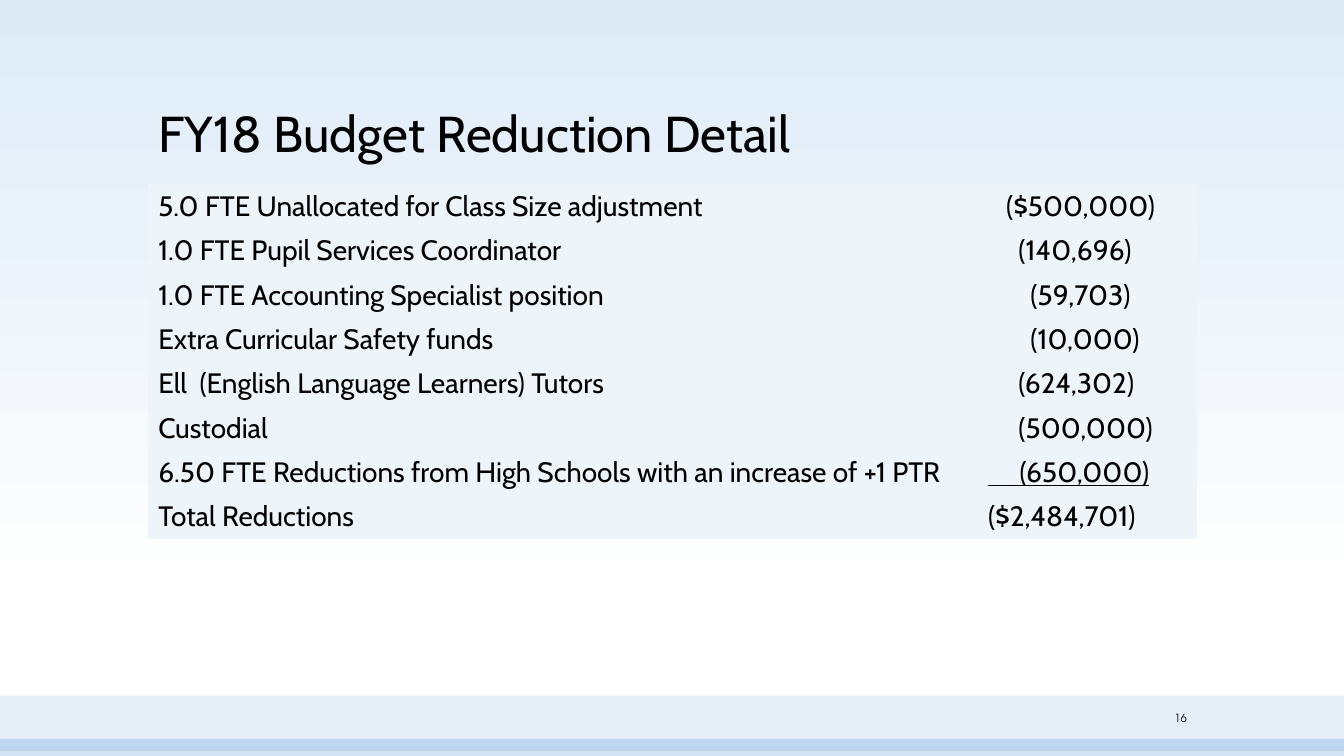
from lxml.etree import SubElement
from pptx import Presentation
from pptx.dml.color import RGBColor
from pptx.enum.shapes import MSO_SHAPE
from pptx.enum.text import MSO_ANCHOR, MSO_AUTO_SIZE, PP_ALIGN
from pptx.oxml.ns import qn
from pptx.util import Inches, Pt

COLORS = {"text": "000000", "band": "5B9BD5", "cell": "EDF4FA",
          "sky": "DEEBF7", "white": "FFFFFF"}
FONT, NUMBER_FONT = "Cabin", "TeX Gyre Adventor"
WIDTH, HEIGHT = 13.33, 7.5
LEFT, CONTENT_WIDTH = 1.47, 10.4
LABEL_WIDTH, ROW_HEIGHT = 8.23, 0.44
CELL_MARGIN, INDENT_STEP = 0.1, 0.06
NO_GRID_STYLE = "{2D5ABB26-0587-4C30-8999-92F81FD0307C}"

# label, amount, indent steps before the amount, underlined
REDUCTIONS = [
    ("5.0 FTE Unallocated for Class Size adjustment", "($500,000)", 3, False),
    ("1.0 FTE Pupil Services Coordinator", "(140,696)", 5, False),
    ("1.0 FTE Accounting Specialist position", "(59,703)", 7, False),
    ("Extra Curricular Safety funds", "(10,000)", 7, False),
    ("Ell  (English Language Learners) Tutors", "(624,302)", 5, False),
    ("Custodial", "(500,000)", 5, False),
    # the rule under the last item starts left of the amount
    ("6.50 FTE Reductions from High Schools with an increase of +1 PTR",
     "     (650,000)", 0, True),
    ("Total Reductions", "($2,484,701)", 0, False),
]


def color(name):
    return RGBColor.from_string(COLORS[name])


def inches(*lengths):
    return [Inches(length) for length in lengths]


def write(text_frame, text, size, font=FONT, align=PP_ALIGN.LEFT, underline=None):
    paragraph = text_frame.paragraphs[0]
    paragraph.alignment = align
    run = paragraph.add_run()
    run.text = text
    for name, value in {"size": Pt(size), "name": font, "underline": underline}.items():
        setattr(run.font, name, value)
    run.font.color.rgb = color("text")
    return paragraph


def paint_background(slide):
    fill = slide.background.fill
    fill.gradient()
    fill.gradient_angle = 270
    for stop, (position, name) in zip(fill.gradient_stops, [(0, "sky"), (0.79, "white")]):
        stop.position = position
        stop.color.rgb = color(name)


def add_band(slide, box, opacity):
    band = slide.shapes.add_shape(MSO_SHAPE.RECTANGLE, *inches(*box))
    band.shadow.inherit = False
    band.line.fill.background()
    band.fill.solid()
    band.fill.fore_color.rgb = color("band")
    tint = band.fill._xPr.find(".//" + qn("a:srgbClr"))
    SubElement(tint, qn("a:alpha"), val=str(opacity * 1000))


def place_title(slide, text, box):
    title = slide.shapes.title
    for name, length in zip(("left", "top", "width", "height"), inches(*box)):
        setattr(title, name, length)
    frame = title.text_frame
    frame.auto_size = MSO_AUTO_SIZE.NONE
    frame.vertical_anchor = MSO_ANCHOR.BOTTOM
    write(frame, text, 36).line_spacing = 0.9


def fill_cell(cell, text, indent=0, underline=None):
    cell.fill.solid()
    cell.fill.fore_color.rgb = color("cell")
    cell.margin_left = Inches(CELL_MARGIN + indent * INDENT_STEP)
    write(cell.text_frame, text, 20, underline=underline)


def add_reductions(slide, left, top, width):
    count = len(REDUCTIONS)
    frame = slide.shapes.add_table(count, 2, *inches(left, top, width, count * ROW_HEIGHT))
    table = frame.table
    table.first_row = table.horz_banding = False
    table._tbl.tblPr.find(qn("a:tableStyleId")).text = NO_GRID_STYLE
    for column, length in zip(table.columns, inches(LABEL_WIDTH, width - LABEL_WIDTH)):
        column.width = length
    for row, (label, amount, indent, underline) in zip(table.rows, REDUCTIONS):
        row.height = Inches(ROW_HEIGHT)
        fill_cell(row.cells[0], label)
        fill_cell(row.cells[1], amount, indent, underline)


def add_slide_number(slide, number, box):
    frame = slide.shapes.add_textbox(*inches(*box)).text_frame
    frame.word_wrap = True
    frame.vertical_anchor = MSO_ANCHOR.MIDDLE
    write(frame, number, 8, NUMBER_FONT, PP_ALIGN.RIGHT)


def main():
    presentation = Presentation()
    presentation.slide_width, presentation.slide_height = inches(WIDTH, HEIGHT)
    slide = presentation.slides.add_slide(presentation.slide_layouts[5])
    paint_background(slide)
    add_band(slide, (0, 6.9, WIDTH, 0.55), 17)
    add_band(slide, (0, 7.33, WIDTH, 0.17), 28)
    place_title(slide, "FY18 Budget Reduction Detail", (LEFT, 0.48, CONTENT_WIDTH, 1.19))
    add_reductions(slide, LEFT, 1.83, CONTENT_WIDTH)
    add_slide_number(slide, "16", (LEFT + CONTENT_WIDTH - 0.7, 6.99, 0.7, 0.26))
    presentation.save("out.pptx")


if __name__ == "__main__":
    main()
